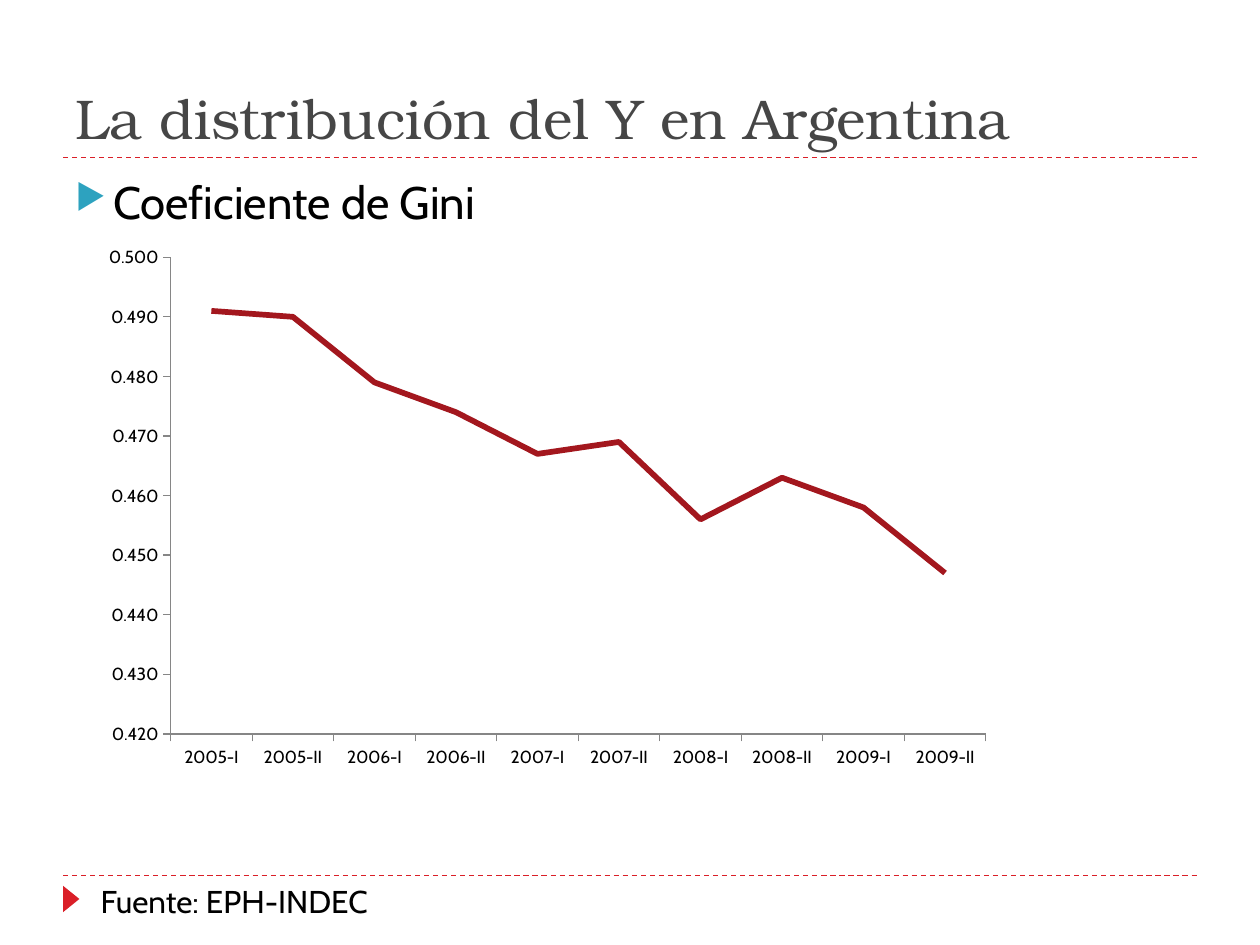
from lxml import etree
from pptx import Presentation
from pptx.chart.data import CategoryChartData
from pptx.dml.color import RGBColor
from pptx.enum.chart import XL_CHART_TYPE as ChartType, XL_TICK_MARK as TickMark
from pptx.enum.dml import MSO_LINE as LineStyle
from pptx.enum.shapes import MSO_CONNECTOR as Connector, MSO_SHAPE as Shape
from pptx.enum.text import MSO_ANCHOR as Anchor, MSO_AUTO_SIZE as AutoSize, PP_ALIGN as Align
from pptx.oxml import parse_xml
from pptx.oxml.ns import nsdecls, qn
from pptx.util import Inches, Pt

COLORS = {
    "title": "464646",
    "text": "000000",
    "accent": "DA1F28",
    "bullet": "2DA2BF",
    "series": "A3171E",
    "axis": "868686",
}
TITLE_FONT = "TeX Gyre Bonum"
BODY_FONT = "Cabin"
PERIODS = [f"{year}-{half}" for year in range(2005, 2010) for half in ("I", "II")]
GINI = [0.491, 0.490, 0.479, 0.474, 0.467, 0.469, 0.456, 0.463, 0.458, 0.447]


def color(name):
    return RGBColor.from_string(COLORS[name])


def style_font(font, name, size, color_name):
    font.name = name
    font.size = Pt(size)
    font.bold = False
    font.color.rgb = color(color_name)


def add_rule(page, top):
    rule = page.shapes.add_connector(
        Connector.STRAIGHT, Inches(0.5), Inches(top), Inches(9.5), Inches(top))
    rule.line.color.rgb = color("accent")
    rule.line.width = Pt(0.75)
    rule.line.dash_style = LineStyle.DASH
    etree.SubElement(rule._element.spPr, qn("a:effectLst"))


def add_marker(page):
    marker = page.shapes.add_shape(
        Shape.ISOSCELES_TRIANGLE, Inches(0.46), Inches(7.07), Inches(0.21), Inches(0.13))
    marker.rotation = 90
    marker.shadow.inherit = False
    marker.fill.solid()
    marker.fill.fore_color.rgb = color("accent")
    marker.line.fill.background()


def set_title(page, text):
    title = page.shapes.title
    title.left, title.top = Inches(0.5), Inches(0.17)
    title.width, title.height = Inches(9), Inches(1.08)
    frame = title.text_frame
    frame.text = text
    frame.auto_size = AutoSize.NONE
    frame.vertical_anchor = Anchor.BOTTOM
    para = frame.paragraphs[0]
    para.alignment = Align.LEFT
    style_font(para.runs[0].font, TITLE_FONT, 32, "title")


def add_text(page, text, left, top, width, height, size):
    box = page.shapes.add_textbox(Inches(left), Inches(top), Inches(width), Inches(height))
    frame = box.text_frame
    frame.word_wrap = True
    frame.text = text
    para = frame.paragraphs[0]
    style_font(para.runs[0].font, BODY_FONT, size, "text")
    return para


def add_bullet(para):
    para.space_before = Pt(6)
    properties = para._p.get_or_add_pPr()
    properties.set("marL", str(Inches(0.3)))
    properties.set("indent", str(-Inches(0.3)))
    bullet_color = etree.SubElement(properties, qn("a:buClr"))
    etree.SubElement(bullet_color, qn("a:srgbClr"), val=COLORS["bullet"])
    etree.SubElement(properties, qn("a:buSzPct"), val="76000")
    etree.SubElement(properties, qn("a:buChar"), char="▶")


def style_axis(axis):
    axis.has_major_gridlines = False
    axis.major_tick_mark = TickMark.OUTSIDE
    axis.minor_tick_mark = TickMark.NONE
    axis.format.line.color.rgb = color("axis")
    axis.format.line.width = Pt(0.75)


def place_plot(chart, **fractions):
    plot_area = chart._chartSpace.chart.plotArea
    for old_layout in plot_area.findall(qn("c:layout")):
        plot_area.remove(old_layout)
    sizes = "".join(f'<c:{key} val="{value}"/>' for key, value in fractions.items())
    plot_area.insert(0, parse_xml(
        f'<c:layout {nsdecls("c")}><c:manualLayout><c:layoutTarget val="inner"/>'
        f'<c:xMode val="edge"/><c:yMode val="edge"/>{sizes}</c:manualLayout></c:layout>'))


def add_gini_chart(page):
    chart_data = CategoryChartData(number_format="0.000")
    chart_data.categories = PERIODS
    chart_data.add_series("Series 1", GINI)
    chart = page.shapes.add_chart(
        ChartType.LINE, Inches(0.7), Inches(1.87), Inches(7.27), Inches(4.3), chart_data).chart
    chart.has_legend = False
    chart.has_title = False
    style_font(chart.font, BODY_FONT, 10, "text")
    plot = chart.plots[0]
    plot.vary_by_categories = False
    series = plot.series[0]
    series.smooth = False
    series.format.line.color.rgb = color("series")
    series.format.line.width = Pt(3.25)
    style_axis(chart.category_axis)
    values = chart.value_axis
    style_axis(values)
    values.minimum_scale, values.maximum_scale, values.major_unit = 0.42, 0.5, 0.01
    values.tick_labels.number_format = "0.000"
    values.tick_labels.number_format_is_linked = False
    place_plot(chart, x=0.09, y=0.04, w=0.89, h=0.88)


def main():
    deck = Presentation()
    deck.slide_width, deck.slide_height = Inches(10), Inches(7.5)
    page = deck.slides.add_slide(deck.slide_layouts[5])
    for top in (6.95, 1.25):
        add_rule(page, top)
    add_marker(page)
    set_title(page, "La distribución del Y en Argentina")
    add_bullet(add_text(page, "Coeficiente de Gini", 0.5, 1.33, 9, 5.4, 26))
    add_gini_chart(page)
    add_text(page, "Fuente: EPH-INDEC", 0.7, 6.95, 3.75, 0.4, 18)
    deck.save("out.pptx")


if __name__ == "__main__":
    main()
